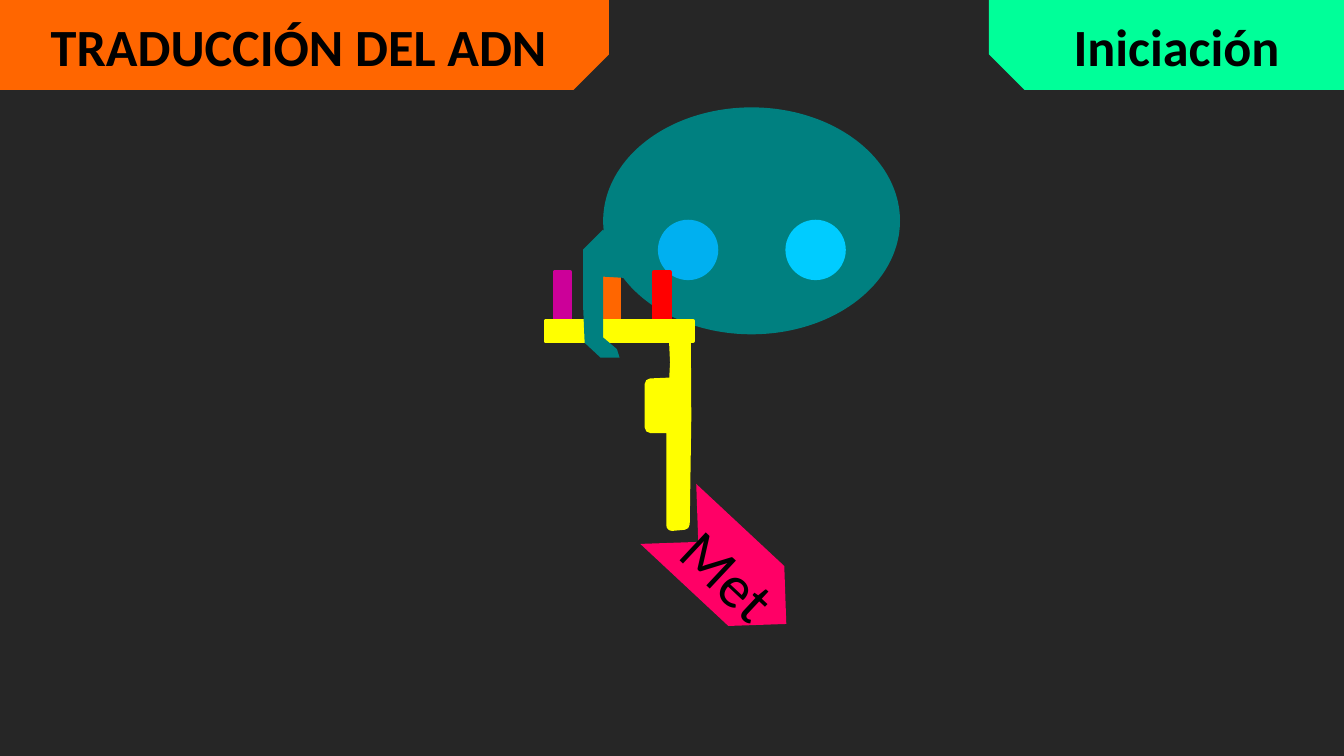
"""Build the slide on the initiation stage of DNA translation."""
from typing import NamedTuple

from pptx import Presentation
from pptx.dml.color import RGBColor
from pptx.enum.shapes import MSO_SHAPE as Shp
from pptx.enum.text import MSO_AUTO_SIZE as Fit
from pptx.oxml.ns import qn
from pptx.util import Cm, Pt

BACKGROUND = RGBColor(0x26, 0x26, 0x26)
BLACK = RGBColor(0x00, 0x00, 0x00)
ORANGE = RGBColor(0xFF, 0x66, 0x00)
MINT = RGBColor(0x00, 0xFF, 0x99)
TEAL = RGBColor(0x00, 0x80, 0x80)
BLUE = RGBColor(0x00, 0xB0, 0xF0)
CYAN = RGBColor(0x00, 0xCC, 0xFF)
PINK = RGBColor(0xFF, 0x00, 0x66)
PURPLE = RGBColor(0xCC, 0x00, 0x99)
RED = RGBColor(0xFF, 0x00, 0x00)
YELLOW = RGBColor(0xFF, 0xFF, 0x00)


class Box(NamedTuple):
    left: float
    top: float
    width: float
    height: float


class Banner(NamedTuple):
    text: str
    box: Box
    text_box: Box
    color: RGBColor
    flipped: bool


class Dot(NamedTuple):
    left: float
    color: RGBColor


class Base(NamedTuple):
    left: float
    color: RGBColor


class Outline(NamedTuple):
    points: list[tuple[float, float]]
    color: RGBColor
    line_pt: float


BANNERS = [
    Banner("TRADUCCIÓN DEL ADN", Box(0, 0, 11.51, 1.7),
           Box(0.71, 0.15, 9.98, 1.45), ORANGE, True),
    Banner("Iniciación", Box(18.69, 0, 6.71, 1.7),
           Box(20.04, 0.15, 4.45, 1.45), MINT, False),
]
DOTS = [Dot(12.47, BLUE), Dot(14.88, CYAN)]
BASES = [Base(9.98, PURPLE), Base(10.9, ORANGE), Base(11.86, RED)]
STEM = Outline([(12.75, 6.43), (12.77, 6.85), (12.75, 7.24), (12.29, 7.26),
                (12.29, 8.08), (12.7, 8.08), (12.7, 9.93), (12.93, 9.91),
                (12.96, 7.89), (12.95, 6.32)], YELLOW, 6)
HOOK = Outline([(11.4, 4.34), (11.02, 4.72), (11.02, 5.77), (11.05, 6.48),
                (11.35, 6.76), (11.71, 6.76), (11.66, 6.6), (11.4, 6.38),
                (11.4, 5.23), (11.91, 5.26)], TEAL, 0)


def paint(sp, color: RGBColor, line_pt: float = 0) -> None:
    sp.shadow.inherit = False
    sp.fill.solid()
    sp.fill.fore_color.rgb = color
    if line_pt:
        sp.line.color.rgb = color
        sp.line.width = Pt(line_pt)
    else:
        sp.line.fill.background()


def add_shape(shapes, kind: Shp, box: Box, color: RGBColor,
              line_pt: float = 0, rotation: float = 0):
    sp = shapes.add_shape(kind, *map(Cm, box))
    sp.rotation = rotation
    paint(sp, color, line_pt)
    return sp


def add_text(shapes, text: str, box: Box, size: int, bold: bool = False,
             rotation: float = 0) -> None:
    sp = shapes.add_textbox(*map(Cm, box))
    sp.rotation = rotation
    tf = sp.text_frame
    tf.word_wrap = False
    tf.auto_size = Fit.SHAPE_TO_FIT_TEXT
    p = tf.paragraphs[0]
    r = p.add_run()
    r.text = text
    r.font.name = "Calibri"
    r.font.size = Pt(size)
    r.font.bold = bold
    r.font.color.rgb = BLACK


def add_banner(shapes, banner: Banner) -> None:
    sp = add_shape(shapes, Shp.SNIP_1_RECTANGLE, banner.box, banner.color, rotation=180)
    sp.adjustments[0] = 0.395
    if banner.flipped:
        sp._element.spPr.find(qn("a:xfrm")).set("flipH", "1")
    add_text(shapes, banner.text, banner.text_box, 28, bold=True)


def add_outline(shapes, outline: Outline) -> None:
    start, *rest = [(Cm(x), Cm(y)) for x, y in outline.points]
    builder = shapes.build_freeform(*start)
    builder.add_line_segments(rest, close=False)
    paint(builder.convert_to_shape(), outline.color, outline.line_pt)


def main() -> None:
    prs = Presentation()
    prs.slide_width, prs.slide_height = Cm(25.4), Cm(14.29)
    s = prs.slides.add_slide(prs.slide_layouts[6])
    s.background.fill.solid()
    s.background.fill.fore_color.rgb = BACKGROUND
    title, stage = BANNERS

    add_banner(s.shapes, title)
    add_shape(s.shapes, Shp.OVAL, Box(11.4, 2.03, 5.61, 4.29), TEAL)
    for dot in DOTS:
        add_shape(s.shapes, Shp.OVAL, Box(dot.left, 4.19, 1.07, 1.07), dot.color, 2)

    amino_acid = s.shapes.add_group_shape().shapes
    add_shape(amino_acid, Shp.CHEVRON, Box(12.22, 9.98, 3.05, 1.55), PINK, rotation=43)
    add_text(amino_acid, "Met", Box(12.57, 10.08, 2.46, 1.63), 32, rotation=43.1)

    anticodon = s.shapes.add_group_shape().shapes
    for base in BASES:
        add_shape(anticodon, Shp.RECTANGLE, Box(base.left, 5.64, 1.3, 0.3),
                  base.color, 2, 270)
    add_shape(anticodon, Shp.RECTANGLE, Box(10.31, 6.07, 2.79, 0.38), YELLOW, 2)

    for outline in (STEM, HOOK):
        add_outline(s.shapes, outline)
    add_banner(s.shapes, stage)
    prs.save("out.pptx")


if __name__ == "__main__":
    main()
